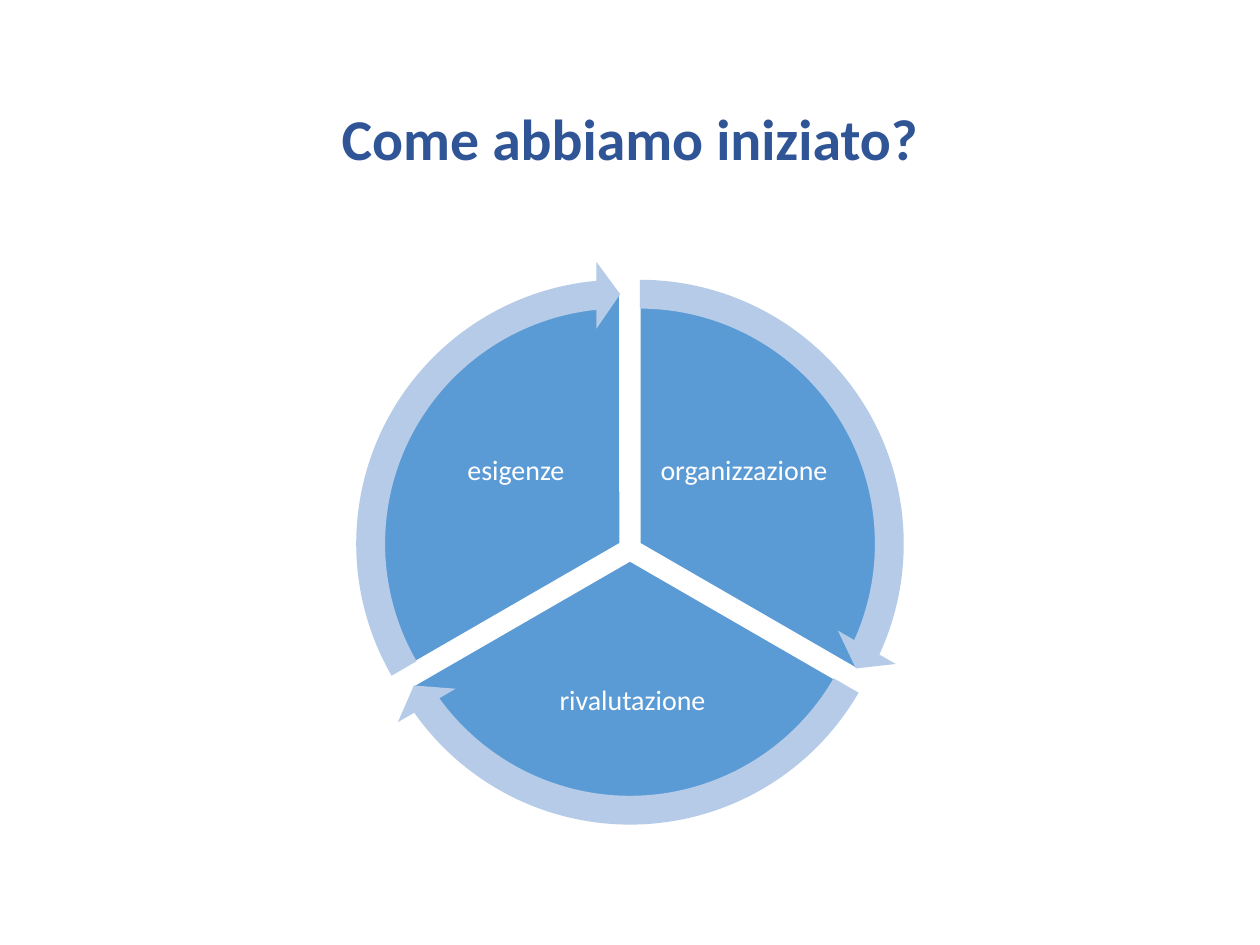
import math
from dataclasses import dataclass

from pptx import Presentation, util as u
from pptx.dml.color import RGBColor
from pptx.enum import shapes, text

NAVY = RGBColor(0x2F, 0x55, 0x97)
BLUE = RGBColor(0x5B, 0x9B, 0xD5)
PALE_BLUE = RGBColor(0xB5, 0xCB, 0xE7)
WHITE = RGBColor(0xFF, 0xFF, 0xFF)

# Cycle geometry in inches and degrees (clockwise from the right)
HUB_X, HUB_Y = 5.0, 4.36
GAP = 0.09
PIE_SIZE, RING_SIZE = 4.0, 4.49
SWEEP = 120
HEAD_ANGLE = 5.46
RING_WIDTH, HEAD_WIDTH = 0.051, 0.059
ANGLE_UNIT = 0.6  # adjustment value for one degree

TITLE_FORMAT = {"size": u.Pt(33), "bold": True, "name": "Calibri"}
LABEL_FORMAT = {"size": u.Pt(16), "name": "Calibri"}


@dataclass(frozen=True)
class Box:
    left: float
    top: float
    width: float
    height: float

    def lengths(self) -> list:
        return [u.Inches(value) for value in (self.left, self.top, self.width, self.height)]


@dataclass(frozen=True)
class Stage:
    label: str
    start: int
    label_box: Box

    @property
    def end(self) -> int:
        return (self.start + SWEEP) % 360

    def square(self, size: float) -> Box:
        """Square around the stage centre, pushed out from the hub."""
        middle = math.radians(self.start + SWEEP / 2)
        return Box(HUB_X + GAP * math.cos(middle) - size / 2,
                   HUB_Y + GAP * math.sin(middle) - size / 2, size, size)


STAGES = [
    Stage("organizzazione", 270, Box(5.19, 3.15, 1.43, 1.19)),
    Stage("rivalutazione", 30, Box(3.95, 5.04, 2.14, 1.05)),
    Stage("esigenze", 150, Box(3.38, 3.15, 1.43, 1.19)),
]


def add_text(slide, box: Box, words: str, color: RGBColor, font_format: dict,
             inset: float) -> None:
    frame = slide.shapes.add_textbox(*box.lengths()).text_frame
    frame_format = {"word_wrap": True, "vertical_anchor": text.MSO_ANCHOR.MIDDLE}
    frame_format.update({f"margin_{side}": u.Inches(inset)
                         for side in ("left", "top", "right", "bottom")})
    for name, value in frame_format.items():
        setattr(frame, name, value)
    paragraph = frame.paragraphs[0]
    paragraph.alignment = text.PP_ALIGN.CENTER
    paragraph.line_spacing = 0.9
    run = paragraph.add_run()
    run.text = words
    for name, value in font_format.items():
        setattr(run.font, name, value)
    run.font.color.rgb = color


def add_cycle_shape(slide, kind, box: Box, adjustments: list, fill: RGBColor):
    shape = slide.shapes.add_shape(kind, *box.lengths())
    shape.shadow.inherit = False
    for index, value in enumerate(adjustments):
        shape.adjustments[index] = value
    shape.fill.solid()
    shape.fill.fore_color.rgb = fill
    shape.line.fill.background()
    return shape


def add_wedge(slide, stage: Stage) -> None:
    shape = add_cycle_shape(slide, shapes.MSO_SHAPE.PIE, stage.square(PIE_SIZE),
                            [stage.start * ANGLE_UNIT, stage.end * ANGLE_UNIT], BLUE)
    shape.line.color.rgb = WHITE
    shape.line.width = u.Pt(1)


def add_ring_arrow(slide, stage: Stage) -> None:
    add_cycle_shape(slide, shapes.MSO_SHAPE.CIRCULAR_ARROW, stage.square(RING_SIZE),
                    [RING_WIDTH, HEAD_ANGLE * ANGLE_UNIT,
                     (stage.end - HEAD_ANGLE) * ANGLE_UNIT,
                     stage.start * ANGLE_UNIT, HEAD_WIDTH], PALE_BLUE)


def main() -> None:
    presentation = Presentation()
    presentation.slide_width, presentation.slide_height = u.Inches(10), u.Inches(7.5)
    slide = presentation.slides.add_slide(presentation.slide_layouts[6])

    # Title
    add_text(slide, Box(0.69, 0.4, 8.62, 1.45), "Come abbiamo iniziato?",
             NAVY, TITLE_FORMAT, 0.1)

    # Wedges with labels
    for stage in STAGES:
        add_wedge(slide, stage)
        add_text(slide, stage.label_box, stage.label, WHITE, LABEL_FORMAT, 0.02)

    # Arrows around the wedges
    for stage in STAGES:
        add_ring_arrow(slide, stage)

    presentation.save("out.pptx")


if __name__ == "__main__":
    main()
